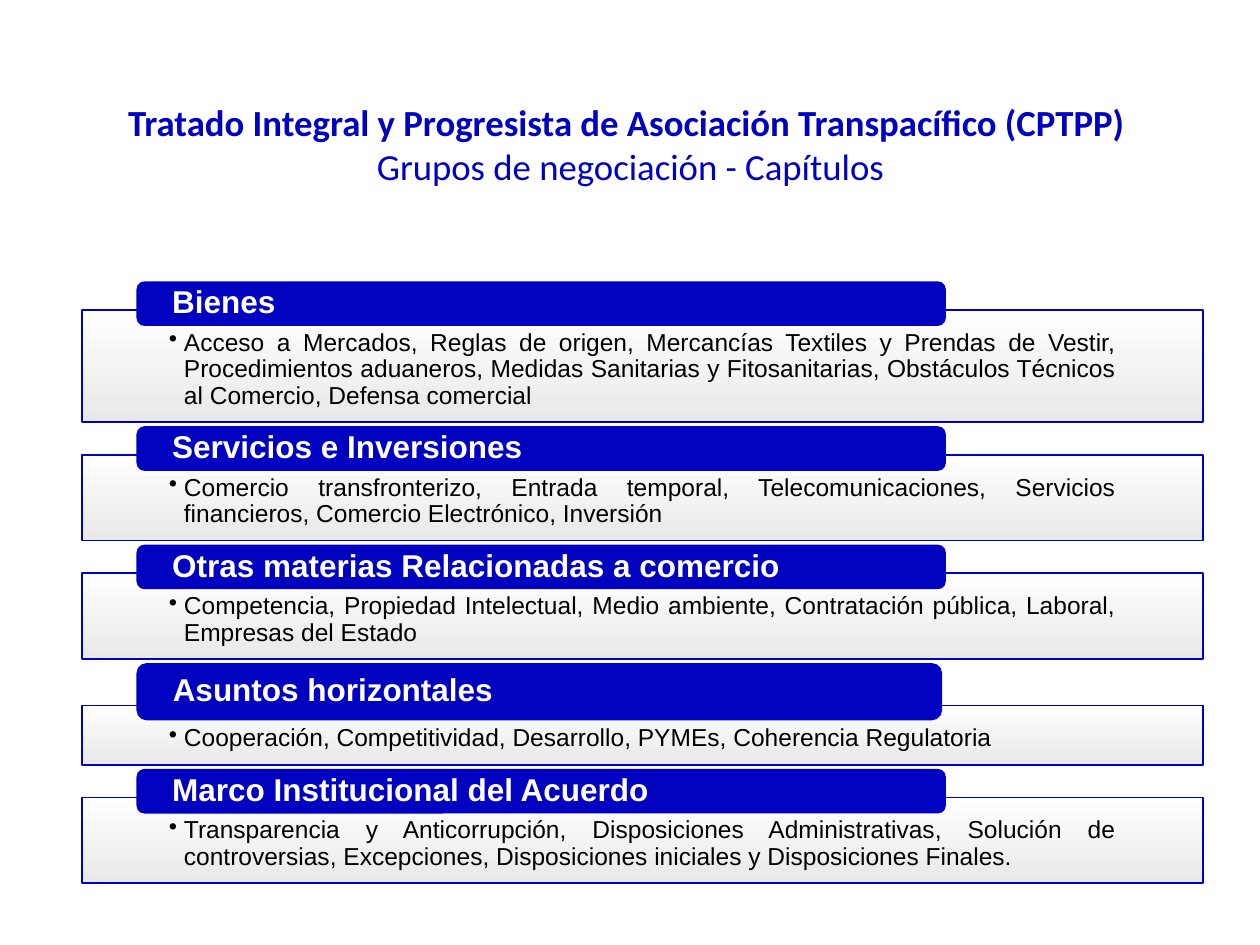
from lxml.etree import SubElement
from pptx import Presentation
from pptx.dml.color import RGBColor
from pptx.enum.shapes import MSO_SHAPE as Kind
from pptx.enum.text import MSO_ANCHOR as Anchor, PP_ALIGN as Align
from pptx.oxml.ns import qn
from pptx.util import Inches, Pt

BLUE = RGBColor(0x01, 0x01, 0xC0)
WHITE = RGBColor(0xFF, 0xFF, 0xFF)
GRAY = RGBColor(0xE7, 0xE7, 0xE7)
BLACK = RGBColor(0, 0, 0)

TOP, GAP = 2.24, 0.04
TITLE = [
    ("Tratado Integral y Progresista de Asociación Transpacífico (CPTPP) ", True),
    ("Grupos de negociación - Capítulos", False),
]
GROUPS = [
    ("Bienes", 6.41, 0.34, 0.22, 0.89,
     "Acceso a Mercados, Reglas de origen, Mercancías Textiles y Prendas de Vestir, "
     "Procedimientos aduaneros, Medidas Sanitarias y Fitosanitarias, "
     "Obstáculos Técnicos al Comercio, Defensa comercial"),
    ("Servicios e Inversiones", 6.41, 0.34, 0.22, 0.68,
     "Comercio transfronterizo, Entrada temporal, Telecomunicaciones, "
     "Servicios financieros, Comercio Electrónico, Inversión"),
    ("Otras materias Relacionadas a comercio", 6.41, 0.34, 0.22, 0.68,
     "Competencia, Propiedad Intelectual, Medio ambiente, Contratación pública, "
     "Laboral, Empresas del Estado "),
    ("Asuntos horizontales", 6.38, 0.44, 0.33, 0.47,
     "Cooperación, Competitividad, Desarrollo, PYMEs, Coherencia Regulatoria"),
    ("Marco Institucional del Acuerdo", 6.41, 0.34, 0.22, 0.68,
     "Transparencia y Anticorrupción, Disposiciones Administrativas, "
     "Solución de controversias, Excepciones, Disposiciones iniciales y "
     "Disposiciones Finales."),
]


def style(para, name, size, color, bold, align):
    para.alignment = align
    for run in para.runs:
        font = run.font
        font.name, font.size, font.bold = name, Pt(size), bold
        font.color.rgb = color


def add_box(slide, kind, left, top, width, height):
    box = slide.shapes.add_shape(
        kind, Inches(left), Inches(top), Inches(width), Inches(height))
    box.shadow.inherit = False
    box.line.color.rgb = BLUE
    box.line.width = Pt(1)
    return box


def set_text(box, text, size, color, bold, pads, anchor):
    frame = box.text_frame
    frame.word_wrap = True
    frame.vertical_anchor = anchor
    frame.margin_left = frame.margin_right = Inches(pads[0])
    frame.margin_top, frame.margin_bottom = Inches(pads[1]), Inches(pads[2])
    frame.text = text
    para = frame.paragraphs[0]
    para.line_spacing = 0.9
    style(para, "Arial", size, color, bold, Align.JUSTIFY)
    return para


def fade(box):
    fill = box.fill
    fill.gradient()
    fill.gradient_angle = 270
    for stop, color, place in zip(fill.gradient_stops, (WHITE, GRAY), (0, 1)):
        stop.color.rgb = color
        stop.position = place
    for node in box.element.spPr.find(qn("a:gradFill")).iter(qn("a:srgbClr")):
        SubElement(node, qn("a:alpha")).set("val", "90000")


def add_bullet(para):
    para.level = 1
    props = para._p.get_or_add_pPr()
    props.set("marL", str(Inches(0.12)))
    props.set("indent", str(Inches(-0.12)))
    SubElement(props, qn("a:buChar")).set("char", "•")


def add_body(slide, top, height, text):
    box = add_box(slide, Kind.RECTANGLE, 0.65, top, 8.9, height)
    fade(box)
    para = set_text(box, text, 14, BLACK, False, (0.69, 0.16, 0.11), Anchor.TOP)
    add_bullet(para)


def add_tab(slide, top, width, height, text):
    box = add_box(slide, Kind.ROUNDED_RECTANGLE, 1.09, top, width, height)
    box.fill.solid()
    box.fill.fore_color.rgb = BLUE
    set_text(box, text, 18, WHITE, True, (0.26, 0, 0), Anchor.MIDDLE)


def add_title(slide):
    box = slide.shapes.add_textbox(
        Inches(0.17), Inches(0.74), Inches(9.67), Inches(0.81))
    frame = box.text_frame
    frame.word_wrap = True
    frame.text = "\n".join(text for text, _ in TITLE)
    for para, (_, bold) in zip(frame.paragraphs, TITLE):
        style(para, "Calibri", 21, BLUE, bold, Align.CENTER)


def main():
    deck = Presentation()
    deck.slide_width, deck.slide_height = Inches(10), Inches(7.5)
    slide = deck.slides.add_slide(deck.slide_layouts[6])
    top = TOP
    for head, width, tall, drop, height, text in GROUPS:
        add_body(slide, top + drop, height, text)
        add_tab(slide, top, width, tall, head)
        top += drop + height + GAP
    add_title(slide)
    deck.save("out.pptx")


if __name__ == "__main__":
    main()
